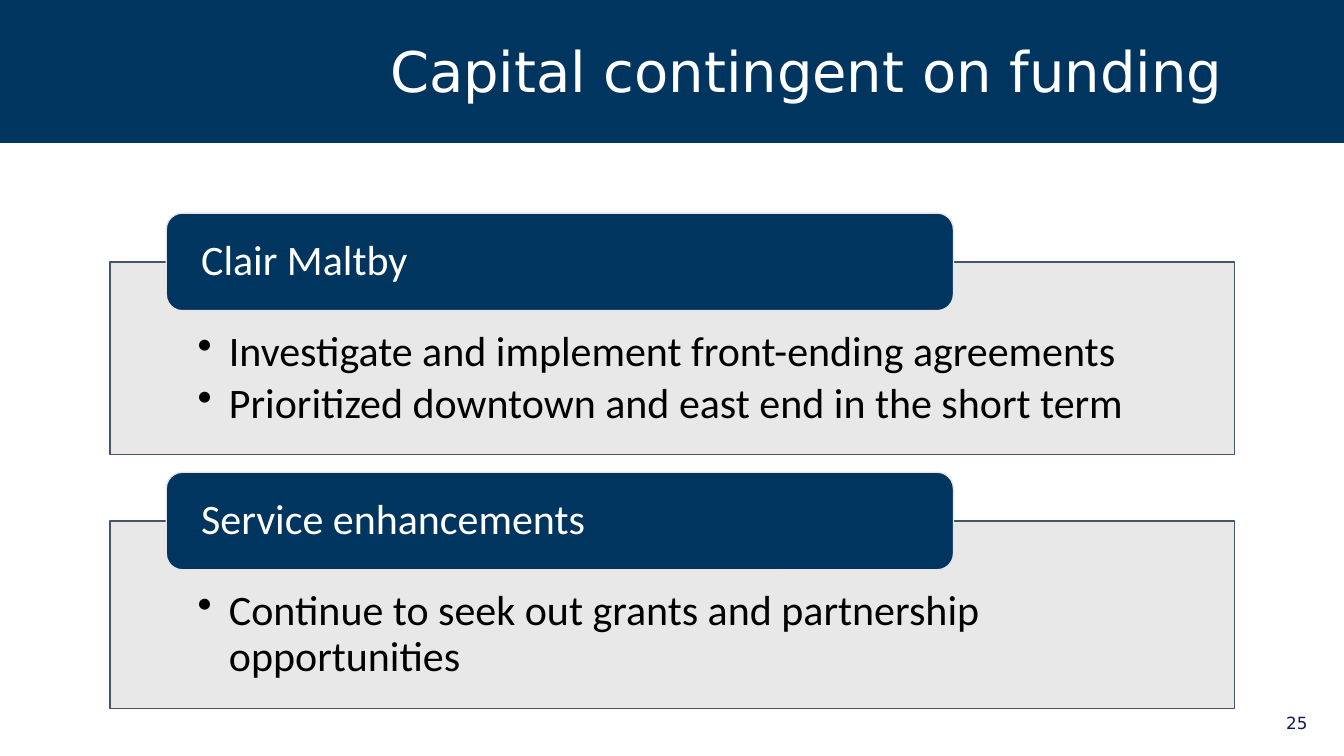
"""Build the slide on capital contingent on funding."""
from dataclasses import dataclass

from lxml.etree import SubElement
from pptx import Presentation
from pptx.dml.color import RGBColor
from pptx.enum.shapes import MSO_SHAPE
from pptx.enum.text import MSO_ANCHOR, PP_ALIGN
from pptx.oxml.ns import qn
from pptx.shapes.autoshape import Shape
from pptx.slide import Slide
from pptx.util import Cm, Pt

COLORS = {
    "navy": "00355F",
    "panel": "E7E6E6",
    "outline": "44546A",
    "number": "11175E",
    "white": "FFFFFF",
    "black": "000000",
}
FONTS = {
    "title": {"name": "DejaVu Sans", "size": Pt(40)},
    "number": {"name": "DejaVu Sans", "size": Pt(12)},
    "body": {"name": "Calibri", "size": Pt(30)},
}
PARAGRAPHS = {
    "title": {"alignment": PP_ALIGN.LEFT, "line_spacing": 0.9},
    "number": {"alignment": PP_ALIGN.RIGHT},
    "heading": {"alignment": PP_ALIGN.LEFT, "line_spacing": 0.9},
    "bullet": {"alignment": PP_ALIGN.LEFT, "line_spacing": 0.9, "space_after": Pt(4.5)},
}
FRAMES = {
    "title": {"word_wrap": True, "vertical_anchor": MSO_ANCHOR.MIDDLE},
    "number": {"word_wrap": True, "vertical_anchor": MSO_ANCHOR.TOP},
    "heading": {
        "word_wrap": True,
        "vertical_anchor": MSO_ANCHOR.MIDDLE,
        "margin_left": Cm(0.76),
        "margin_right": Cm(0.76),
        "margin_top": 0,
        "margin_bottom": 0,
    },
    "bullet": {
        "word_wrap": True,
        "vertical_anchor": MSO_ANCHOR.TOP,
        "margin_left": Cm(2.21),
        "margin_right": Cm(2.21),
        "margin_top": Cm(1.73),
        "margin_bottom": Cm(0.58),
    },
}
SLIDE_WIDTH, SLIDE_HEIGHT = 33.87, 19.05
PANEL_LEFT, PANEL_WIDTH = 2.77, 28.35
HEADING_LEFT, HEADING_WIDTH, HEADING_HEIGHT = 4.19, 19.84, 2.46
BULLET_INDENT = Cm(0.79)


@dataclass(frozen=True)
class Box:
    left: float
    top: float
    width: float
    height: float

    def lengths(self) -> tuple[Cm, Cm, Cm, Cm]:
        return Cm(self.left), Cm(self.top), Cm(self.width), Cm(self.height)


@dataclass(frozen=True)
class Section:
    heading: str
    bullets: tuple[str, ...]
    top: float
    height: float


SECTIONS = (
    Section(
        "Clair Maltby",
        (
            "Investigate and implement front-ending agreements",
            "Prioritized downtown and east end in the short term",
        ),
        6.6,
        4.85,
    ),
    Section(
        "Service enhancements",
        ("Continue to seek out grants and partnership opportunities",),
        13.13,
        4.72,
    ),
)


def color(name: str) -> RGBColor:
    return RGBColor.from_string(COLORS[name])


def apply(target: object, values: dict) -> None:
    for name, value in values.items():
        setattr(target, name, value)


def add_block(
    slide: Slide, preset: MSO_SHAPE, box: Box, fill: str, line: str | None = None
) -> Shape:
    shape = slide.shapes.add_shape(preset, *box.lengths())
    shape.shadow.inherit = False
    shape.fill.solid()
    shape.fill.fore_color.rgb = color(fill)
    if line:
        shape.line.color.rgb = color(line)
        shape.line.width = Pt(1)
    else:
        shape.line.fill.background()
    return shape


def write(
    shape: Shape, lines: tuple[str, ...], style: str, font: str, font_color: str
) -> None:
    frame = shape.text_frame
    apply(frame, FRAMES[style])
    frame.text = "\n".join(lines)
    for paragraph in frame.paragraphs:
        apply(paragraph, PARAGRAPHS[style])
        if style == "bullet":
            properties = paragraph._p.get_or_add_pPr()
            properties.set("marL", str(BULLET_INDENT))
            properties.set("indent", str(-BULLET_INDENT))
            SubElement(properties, qn("a:buChar"), char="•")
        apply(paragraph.font, FONTS[font])
        paragraph.font.color.rgb = color(font_color)


def add_section(slide: Slide, section: Section) -> None:
    panel_box = Box(PANEL_LEFT, section.top, PANEL_WIDTH, section.height)
    panel = add_block(slide, MSO_SHAPE.RECTANGLE, panel_box, "panel", "outline")
    fill_color = panel.fill._xPr.find(qn("a:solidFill"))[0]
    SubElement(fill_color, qn("a:alpha"), val="90000")
    write(panel, section.bullets, "bullet", "body", "black")

    heading_top = section.top - HEADING_HEIGHT / 2
    heading_box = Box(HEADING_LEFT, heading_top, HEADING_WIDTH, HEADING_HEIGHT)
    heading = add_block(
        slide, MSO_SHAPE.ROUNDED_RECTANGLE, heading_box, "navy", "panel"
    )
    write(heading, (section.heading,), "heading", "body", "white")


def main() -> None:
    presentation = Presentation()
    presentation.slide_width = Cm(SLIDE_WIDTH)
    presentation.slide_height = Cm(SLIDE_HEIGHT)
    slide = presentation.slides.add_slide(presentation.slide_layouts[6])

    add_block(slide, MSO_SHAPE.RECTANGLE, Box(0, 0, SLIDE_WIDTH, 3.6), "navy")
    title = slide.shapes.add_textbox(*Box(9.58, 0.76, 22.58, 2.24).lengths())
    write(title, ("Capital contingent on funding",), "title", "title", "white")
    for section in SECTIONS:
        add_section(slide, section)
    number = slide.shapes.add_textbox(*Box(31.32, 17.83, 1.88, 1.02).lengths())
    write(number, ("25",), "number", "number", "number")

    presentation.save("out.pptx")


if __name__ == "__main__":
    main()
